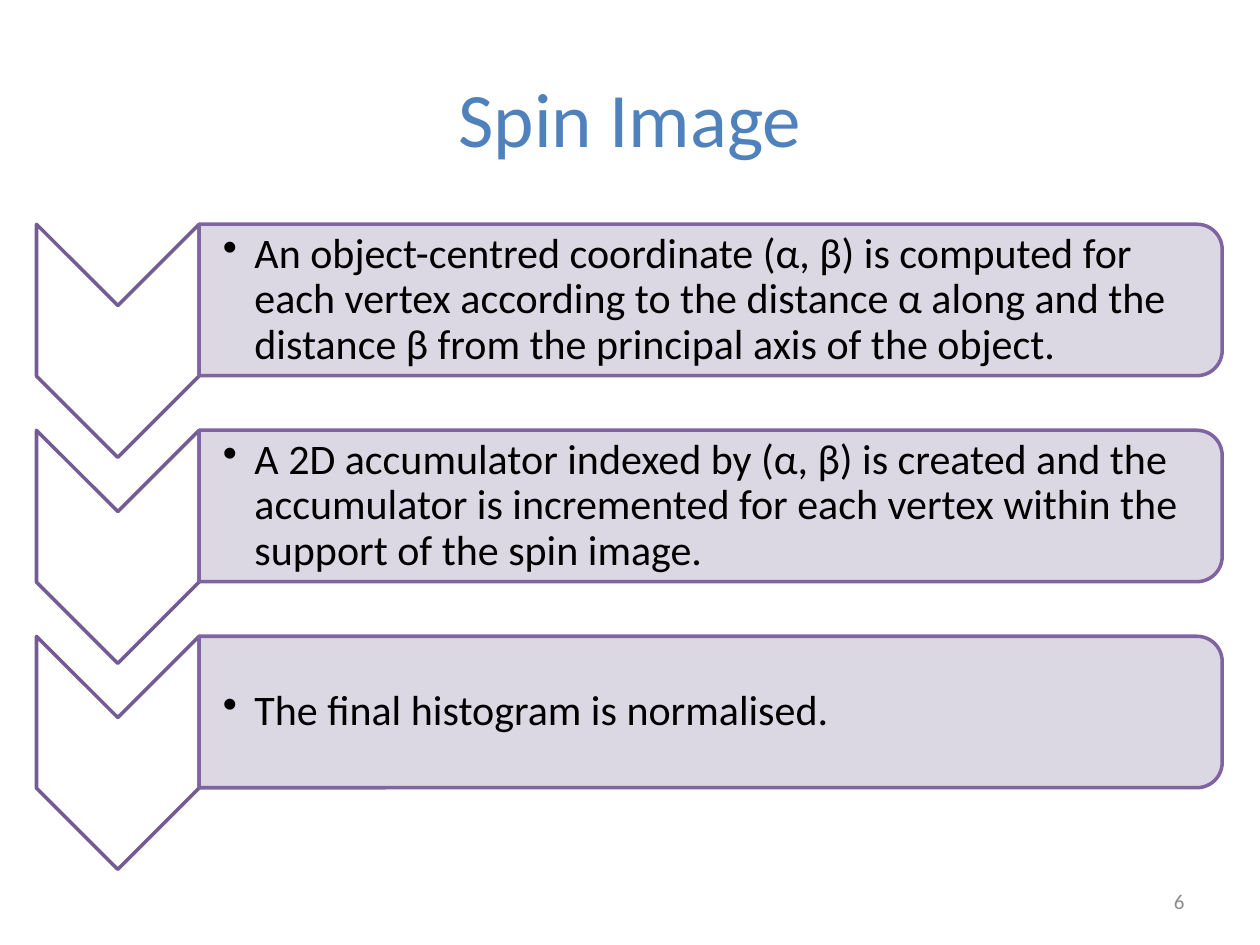
from dataclasses import dataclass

from lxml.etree import SubElement
from pptx import Presentation
from pptx.dml.color import RGBColor
from pptx.enum.shapes import MSO_SHAPE
from pptx.enum.text import MSO_ANCHOR, PP_ALIGN
from pptx.oxml.ns import qn
from pptx.util import Inches, Pt


@dataclass(frozen=True)
class Theme:
    font: str = "Calibri"
    title: str = "4F81BD"
    text: str = "000000"
    number: str = "8C8C8C"
    chevron_fill: str = "FFFFFF"
    chevron_line: str = "745B93"
    bar_fill: str = "D8D3E0"
    bar_line: str = "8064A2"
    bar_alpha: int = 90
    line_pt: float = 2
    title_pt: int = 44
    body_pt: int = 24
    number_pt: int = 12


@dataclass(frozen=True)
class Box:
    x: float
    y: float
    w: float
    h: float

    def emu(self):
        return [Inches(v) for v in (self.x, self.y, self.w, self.h)]

    def turned(self):
        """Frame that covers this box once rotated by a quarter turn."""
        return Box(self.x + (self.w - self.h) / 2,
                   self.y + (self.h - self.w) / 2, self.h, self.w)


THEME = Theme()
SLIDE_W, SLIDE_H = 10, 7.5
STEPS = [
    "An object-centred coordinate (α, β) is computed for each vertex according "
    "to the distance α along and the distance β from the principal axis of the object.",
    "A 2D accumulator indexed by (α, β) is created and the accumulator is "
    "incremented for each vertex within the support of the spin image.",
    "The final histogram is normalised.",
]


def add_text(s, box, text, size, color, align=PP_ALIGN.LEFT):
    tb = s.shapes.add_textbox(*box.emu())
    tf = tb.text_frame
    tf.word_wrap = True
    tf.vertical_anchor = MSO_ANCHOR.MIDDLE
    p = tf.paragraphs[0]
    p.alignment = align
    r = p.add_run()
    r.text = text
    r.font.name = THEME.font
    r.font.size = Pt(size)
    r.font.color.rgb = RGBColor.from_string(color)
    return tf


def add_turned_shape(s, kind, box, fill, line):
    sp = s.shapes.add_shape(kind, *box.turned().emu())
    sp.rotation = 90
    sp.shadow.inherit = False
    sp.fill.solid()
    sp.fill.fore_color.rgb = RGBColor.from_string(fill)
    sp.line.color.rgb = RGBColor.from_string(line)
    sp.line.width = Pt(THEME.line_pt)
    return sp


def set_bullet(p, indent):
    pPr = p._p.get_or_add_pPr()
    pPr.set("marL", str(Inches(indent)))
    pPr.set("indent", str(-Inches(indent)))
    SubElement(pPr, qn("a:buChar"), char="•")


def add_step(s, box, text):
    # Downward chevron; its tip hangs below the bar
    chevron_w = 1.29
    add_turned_shape(s, MSO_SHAPE.CHEVRON, Box(box.x, box.y, chevron_w, box.h),
                     THEME.chevron_fill, THEME.chevron_line)

    # Translucent bar with rounded right corners
    bar = Box(box.x + chevron_w, box.y, box.w - chevron_w, box.h * 0.65)
    sp = add_turned_shape(s, MSO_SHAPE.ROUND_2_SAME_RECTANGLE, bar,
                          THEME.bar_fill, THEME.bar_line)
    clr = sp._element.spPr.find(qn("a:solidFill")).find(qn("a:srgbClr"))
    SubElement(clr, qn("a:alpha"), val=str(THEME.bar_alpha * 1000))

    # Bulleted text inside the bar
    pad = 0.06
    tf = add_text(s, Box(bar.x, bar.y + pad, bar.w - pad, bar.h - 2 * pad),
                  text, THEME.body_pt, THEME.text)
    tf.margin_left = Inches(0.19)
    tf.margin_right = tf.margin_top = tf.margin_bottom = Inches(0.02)
    p = tf.paragraphs[0]
    p.line_spacing = 0.9
    set_bullet(p, 0.25)


def add_steps(s, box, steps):
    step_h = 1.85
    pitch = (box.h - step_h) / (len(steps) - 1)
    for i, text in enumerate(steps):
        add_step(s, Box(box.x, box.y + i * pitch, box.w, step_h), text)


def main():
    prs = Presentation()
    prs.slide_width, prs.slide_height = Inches(SLIDE_W), Inches(SLIDE_H)
    s = prs.slides.add_slide(prs.slide_layouts[6])
    margin = SLIDE_W * 0.05

    # Title
    add_text(s, Box(margin, SLIDE_H * 0.04, SLIDE_W - 2 * margin, SLIDE_H / 6),
             "Spin Image", THEME.title_pt, THEME.title, PP_ALIGN.CENTER)

    # Chevron list
    add_steps(s, Box(0.29, 1.78, 9.41, 5.12), STEPS)

    # Slide number
    number_w = SLIDE_W * 0.23
    add_text(s, Box(SLIDE_W - margin - number_w, 6.95, number_w, 0.4),
             "6", THEME.number_pt, THEME.number, PP_ALIGN.RIGHT)

    prs.save("out.pptx")


if __name__ == "__main__":
    main()
